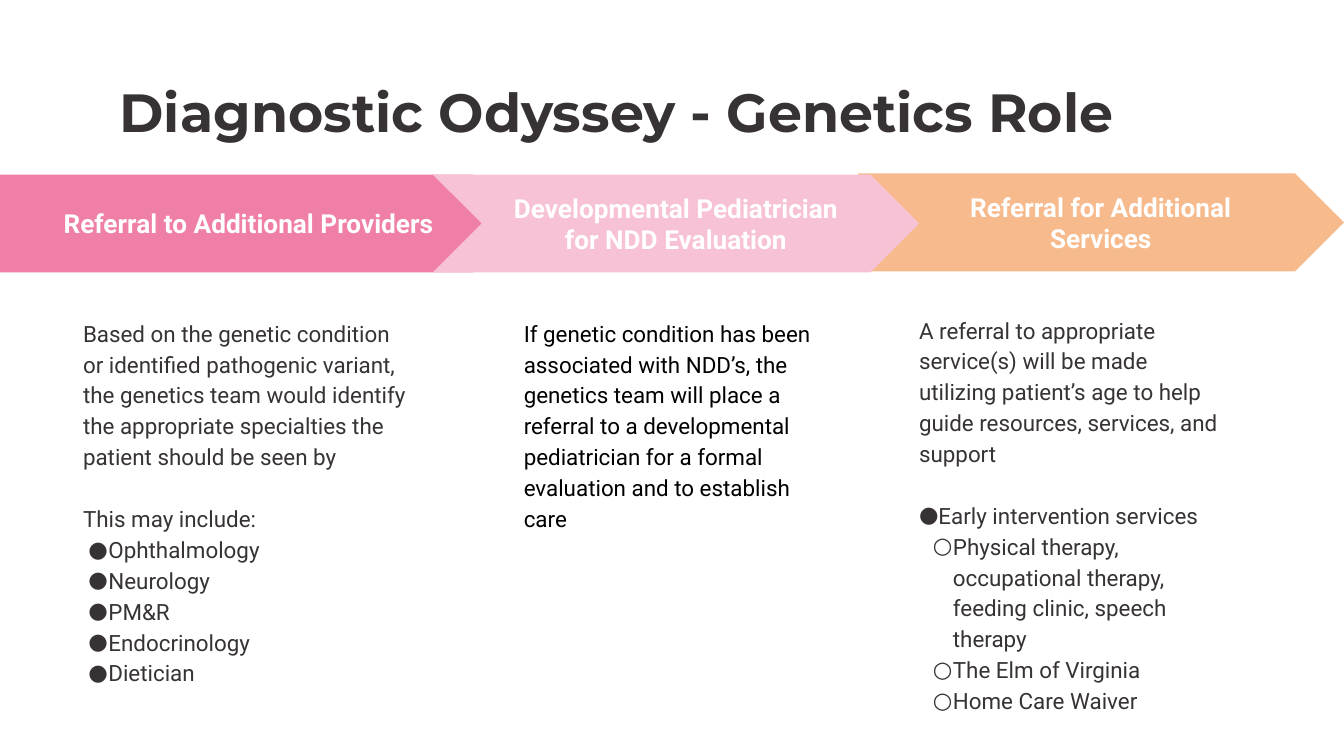
from lxml.etree import SubElement
from pptx import Presentation
from pptx.dml.color import RGBColor
from pptx.enum.shapes import MSO_SHAPE
from pptx.enum.text import MSO_ANCHOR, PP_ALIGN
from pptx.oxml.ns import qn
from pptx.util import Cm, Pt

CHARCOAL = RGBColor(0x37, 0x33, 0x34)
BLACK = RGBColor(0, 0, 0)
WHITE = RGBColor(0xFF, 0xFF, 0xFF)
ORANGE = RGBColor(0xF7, 0xBA, 0x8C)
PINK = RGBColor(0xEF, 0x7F, 0xA7)
PALE_PINK = RGBColor(0xF7, 0xC2, 0xD6)

TITLE = "Diagnostic Odyssey - Genetics Role"
TITLE_BOX = (2.01, 1.24, 21.41, 1.6)
INSET = Cm(0.25)
BLANK_LINE = Pt(16.5)

# style: bullet, level, left margin, hanging indent
STYLES = {
    "plain": None,
    "provider": ("●", 0, 0.48, 0.38),
    "service": ("●", 0, 0.3, 0.3),
    "detail": ("○", 1, 0.64, 0.38),
}

STEPS = [
    {
        "heading": "Referral for Additional Services",
        "outline": MSO_SHAPE.CHEVRON,
        "fill": ORANGE,
        "arrow": (16.21, 3.28, 9.19, 1.85),
        "body": (17.12, 5.66, 6.22, 8.18),
        "color": CHARCOAL,
        "blocks": [
            [("plain", "A referral to appropriate service(s) will be made utilizing "
                       "patient’s age to help guide resources, services, and support")],
            [
                ("service", "Early intervention services"),
                ("detail", "Physical therapy, occupational therapy, feeding clinic, speech therapy"),
                ("detail", "The Elm of Virginia"),
                ("detail", "Home Care Waiver"),
            ],
        ],
    },
    {
        "heading": "Referral to Additional Providers",
        "outline": MSO_SHAPE.PENTAGON,
        "fill": PINK,
        "arrow": (0, 3.3, 9.86, 1.85),
        "body": (1.32, 5.72, 6.71, 8.15),
        "color": CHARCOAL,
        "blocks": [
            [("plain", "Based on the genetic condition or identified pathogenic variant, "
                       "the genetics team would identify the appropriate specialties "
                       "the patient should be seen by")],
            [
                ("plain", "This may include:"),
                ("provider", "Ophthalmology"),
                ("provider", "Neurology"),
                ("provider", "PM&R"),
                ("provider", "Endocrinology"),
                ("provider", "Dietician"),
            ],
        ],
    },
    {
        "heading": "Developmental Pediatrician for NDD Evaluation",
        "outline": MSO_SHAPE.CHEVRON,
        "fill": PALE_PINK,
        "arrow": (8.18, 3.3, 9.19, 1.85),
        "body": (9.65, 5.72, 6.22, 7.26),
        "color": BLACK,
        "blocks": [
            [("plain", "If genetic condition has been associated with NDD’s, the genetics "
                       "team will place a referral to a developmental pediatrician for a "
                       "formal evaluation and to establish care")],
        ],
    },
]


def lengths(box):
    return [Cm(value) for value in box]


def prepare(frame, anchor):
    frame.word_wrap = True
    frame.vertical_anchor = anchor
    frame.margin_left = frame.margin_right = INSET
    frame.margin_top = frame.margin_bottom = INSET


def write(paragraph, text, name, size, color, bold=False):
    paragraph.text = text
    font = paragraph.font
    font.name, font.size, font.bold = name, Pt(size), bold
    font.color.rgb = color


def add_bullet(paragraph, symbol, level, margin, hanging):
    paragraph.level = level
    properties = paragraph._p.get_or_add_pPr()
    properties.set("marL", str(Cm(margin)))
    properties.set("indent", str(-Cm(hanging)))
    bullet_color = SubElement(properties, qn("a:buClr"))
    SubElement(bullet_color, qn("a:srgbClr"), val=str(CHARCOAL))
    SubElement(properties, qn("a:buFont"), typeface="Roboto")
    SubElement(properties, qn("a:buChar"), char=symbol)
    default_font = properties.find(qn("a:defRPr"))
    if default_font is not None:
        properties.append(default_font)


def add_arrow(slide, step):
    arrow = slide.shapes.add_shape(step["outline"], *lengths(step["arrow"]))
    arrow.shadow.inherit = False
    arrow.fill.solid()
    arrow.fill.fore_color.rgb = step["fill"]
    arrow.line.fill.background()
    prepare(arrow.text_frame, MSO_ANCHOR.MIDDLE)
    heading = arrow.text_frame.paragraphs[0]
    heading.alignment = PP_ALIGN.CENTER
    write(heading, step["heading"], "Roboto", 14, WHITE, True)


def add_body(slide, step):
    frame = slide.shapes.add_textbox(*lengths(step["body"])).text_frame
    prepare(frame, MSO_ANCHOR.TOP)
    for block_index, block in enumerate(step["blocks"]):
        for line_index, (style, text) in enumerate(block):
            first = block_index == line_index == 0
            paragraph = frame.paragraphs[0] if first else frame.add_paragraph()
            paragraph.line_spacing = 1.15
            paragraph.space_before = BLANK_LINE if block_index and not line_index else Pt(0)
            write(paragraph, text, "Roboto", 12, step["color"])
            if STYLES[style]:
                add_bullet(paragraph, *STYLES[style])


def main():
    deck = Presentation()
    deck.slide_width, deck.slide_height = Cm(25.4), Cm(14.29)
    slide = deck.slides.add_slide(deck.slide_layouts[6])
    title = slide.shapes.add_textbox(*lengths(TITLE_BOX)).text_frame
    prepare(title, MSO_ANCHOR.TOP)
    write(title.paragraphs[0], TITLE, "Montserrat", 28.8, CHARCOAL, True)
    for step in STEPS:
        add_arrow(slide, step)
        add_body(slide, step)
    deck.save("out.pptx")


if __name__ == "__main__":
    main()
